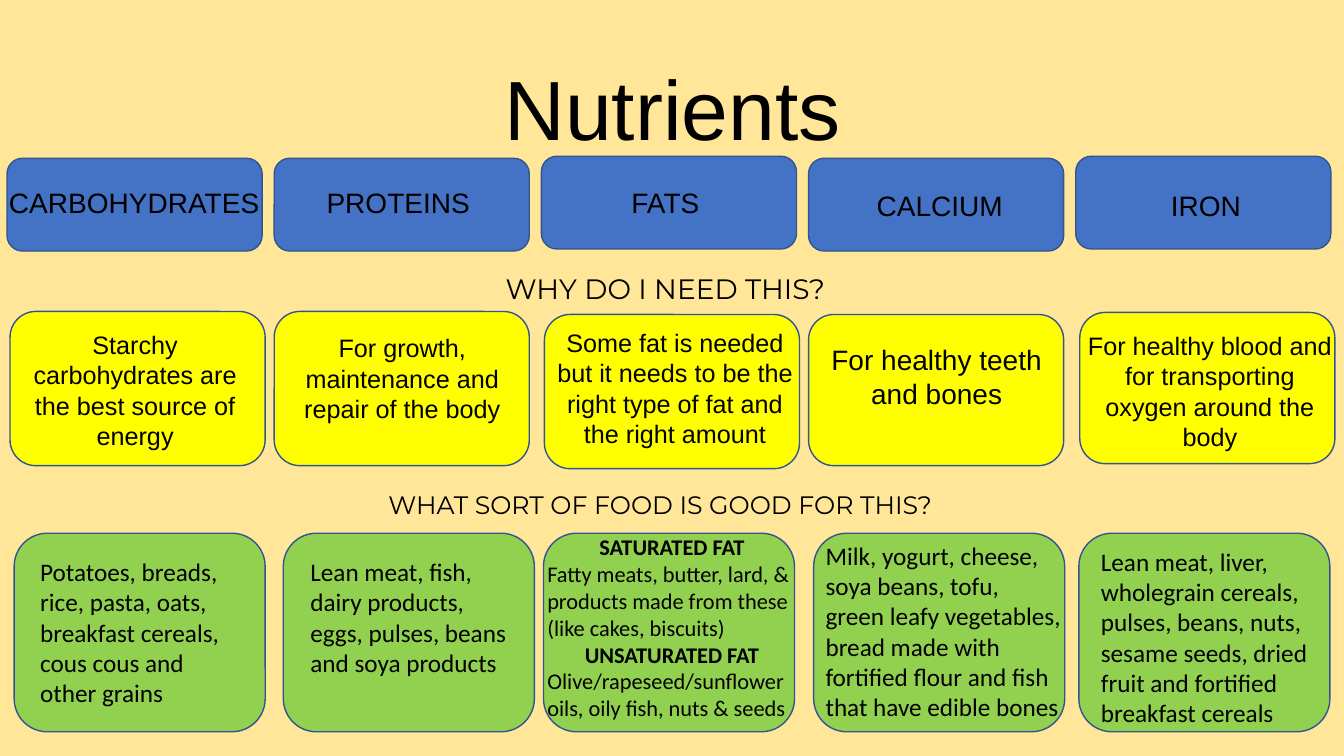
from dataclasses import dataclass
from pptx import Presentation
from pptx.dml.color import RGBColor
from pptx.enum.shapes import MSO_SHAPE
from pptx.enum.text import MSO_ANCHOR, MSO_AUTO_SIZE, PP_ALIGN
from pptx.util import Inches, Pt

ROUND = MSO_SHAPE.ROUNDED_RECTANGLE
MIDDLE = MSO_ANCHOR.MIDDLE
FIXED = MSO_AUTO_SIZE.NONE
CENTER, LEFT = PP_ALIGN.CENTER, PP_ALIGN.LEFT


@dataclass(frozen=True)
class Theme:
    back: str = "FFE699"
    ink: str = "000000"
    edge: str = "325491"
    blue: str = "4472C4"
    yellow: str = "FFFF00"
    green: str = "92D050"
    sans: str = "Arial"
    body: str = "Calibri"
    ask: str = "Montserrat"
    title: int = 60
    large: int = 20
    base: int = 18
    small: int = 16


THEME = Theme()

# Each card: left, top, height, text size, text, text box relative to the card
NAMES = [
    (0.07 + 2.65 * i, top, 0.92, THEME.large, name, (dx, dy, 2.78, 0.44))
    for i, (name, top, dx, dy) in enumerate([
        ("CARBOHYDRATES", 1.57, -0.13, 0.22),
        ("PROTEINS", 1.57, -0.16, 0.22),
        ("FATS", 1.55, -0.16, 0.24),
        ("CALCIUM", 1.57, -0.09, 0.25),
        ("IRON", 1.55, -0.1, 0.27),
    ])
]
REASONS = [
    (0.1, 3.09, 1.53, THEME.base,
     "Starchy carbohydrates are the best source of energy",
     (-0.02, 0.13, 2.52, 1.31)),
    (2.72, 3.09, 1.53, THEME.base,
     "For growth, maintenance and repair of the body",
     (0.01, 0.16, 2.52, 1.01)),
    (5.4, 3.12, 1.53, THEME.base,
     "Some fat is needed but it needs to be the right type of fat "
     "and the right amount",
     (-0.02, 0.08, 2.63, 1.31)),
    (8.02, 3.12, 1.5, THEME.large,
     "For healthy teeth and bones",
     (0.01, 0.23, 2.52, 0.77)),
    (10.71, 3.1, 1.5, THEME.base,
     "For healthy blood and for transporting oxygen around the body",
     (-0.03, 0.13, 2.64, 1.31)),
]
FOODS = [
    (0.14, 5.29, 1.97, THEME.base,
     "Potatoes, breads, rice, pasta, oats, breakfast cereals, "
     "cous cous and other grains",
     (0.16, 0.18, 2.16, 1.62)),
    (2.81, 5.29, 1.97, THEME.base,
     "Lean meat, fish, dairy products, eggs, pulses, beans "
     "and soya products",
     (0.17, 0.18, 2.16, 1.31)),
    (5.39, 5.29, 1.97, THEME.small,
     "SATURATED FAT\n"
     "Fatty meats, butter, lard, & products made from these "
     "(like cakes, biscuits)\n"
     "UNSATURATED FAT\n"
     "Olive/rapeseed/sunflower oils, oily fish, nuts & seeds",
     (-0.06, -0.05, 2.67, 1.99)),
    (8.07, 5.29, 1.97, THEME.base,
     "Milk, yogurt, cheese, soya beans, tofu, green leafy vegetables, "
     "bread made with fortified flour and fish that have edible bones",
     (0.02, 0.02, 2.54, 1.92)),
    (10.7, 5.29, 1.97, THEME.base,
     "Lean meat, liver, wholegrain cereals, pulses, beans, nuts, "
     "sesame seeds, dried fruit and fortified breakfast cereals",
     (0.12, 0.08, 2.49, 1.92)),
]


def color(code):
    return RGBColor.from_string(code)


def style(para, face, size, align):
    para.alignment = align
    for run in para.runs:
        run.font.name = face
        run.font.size = Pt(size)
        run.font.color.rgb = color(THEME.ink)


def label(shapes, box, text, face, size, align=CENTER):
    """Add a text box; capital lines in left-aligned text become headings."""
    frame = shapes.add_textbox(*map(Inches, box)).text_frame
    frame.word_wrap = True
    frame.text = text
    for para in frame.paragraphs:
        head = align == LEFT and para.text.isupper()
        style(para, face, size, CENTER if head else align)
        para.font.bold = head
        for run in para.runs:
            run.font.bold = head


def card(slide, box, fill, text, inner, face, size, align):
    group = slide.shapes.add_group_shape()
    panel = group.shapes.add_shape(ROUND, *map(Inches, box))
    panel.shadow.inherit = False
    panel.fill.solid()
    panel.fill.fore_color.rgb = color(fill)
    panel.line.color.rgb = color(THEME.edge)
    panel.line.width = Pt(1)
    dx, dy, wide, high = inner
    place = (box[0] + dx, box[1] + dy, wide, high)
    label(group.shapes, place, text, face, size, align)


def row(slide, cards, wide, fill, face, align=CENTER):
    for left, top, high, size, text, inner in cards:
        card(slide, (left, top, wide, high), fill, text, inner,
             face, size, align)


def heading(slide, box, text):
    title = slide.shapes.title
    title.left, title.top, title.width, title.height = map(Inches, box)
    frame = title.text_frame
    frame.text = text
    frame.auto_size = FIXED
    frame.vertical_anchor = MIDDLE
    para = frame.paragraphs[0]
    style(para, THEME.sans, THEME.title, CENTER)
    para.line_spacing = 0.9


def main():
    deck = Presentation()
    deck.slide_width, deck.slide_height = Inches(13.33), Inches(7.5)
    slide = deck.slides.add_slide(deck.slide_layouts[5])
    slide.background.fill.solid()
    slide.background.fill.fore_color.rgb = color(THEME.back)

    heading(slide, (0.92, 0.4, 11.5, 1.45), "Nutrients")
    row(slide, NAMES, 2.53, THEME.blue, THEME.sans)
    row(slide, REASONS, 2.53, THEME.yellow, THEME.sans)
    label(slide.shapes, (3.3, 2.64, 6.6, 0.44),
          "WHY DO I NEED THIS?", THEME.ask, THEME.large)
    label(slide.shapes, (3.18, 4.81, 6.74, 0.4),
          "WHAT SORT OF FOOD IS GOOD FOR THIS?", THEME.ask, THEME.base)
    row(slide, FOODS, 2.49, THEME.green, THEME.body, LEFT)
    deck.save("out.pptx")


if __name__ == "__main__":
    main()
